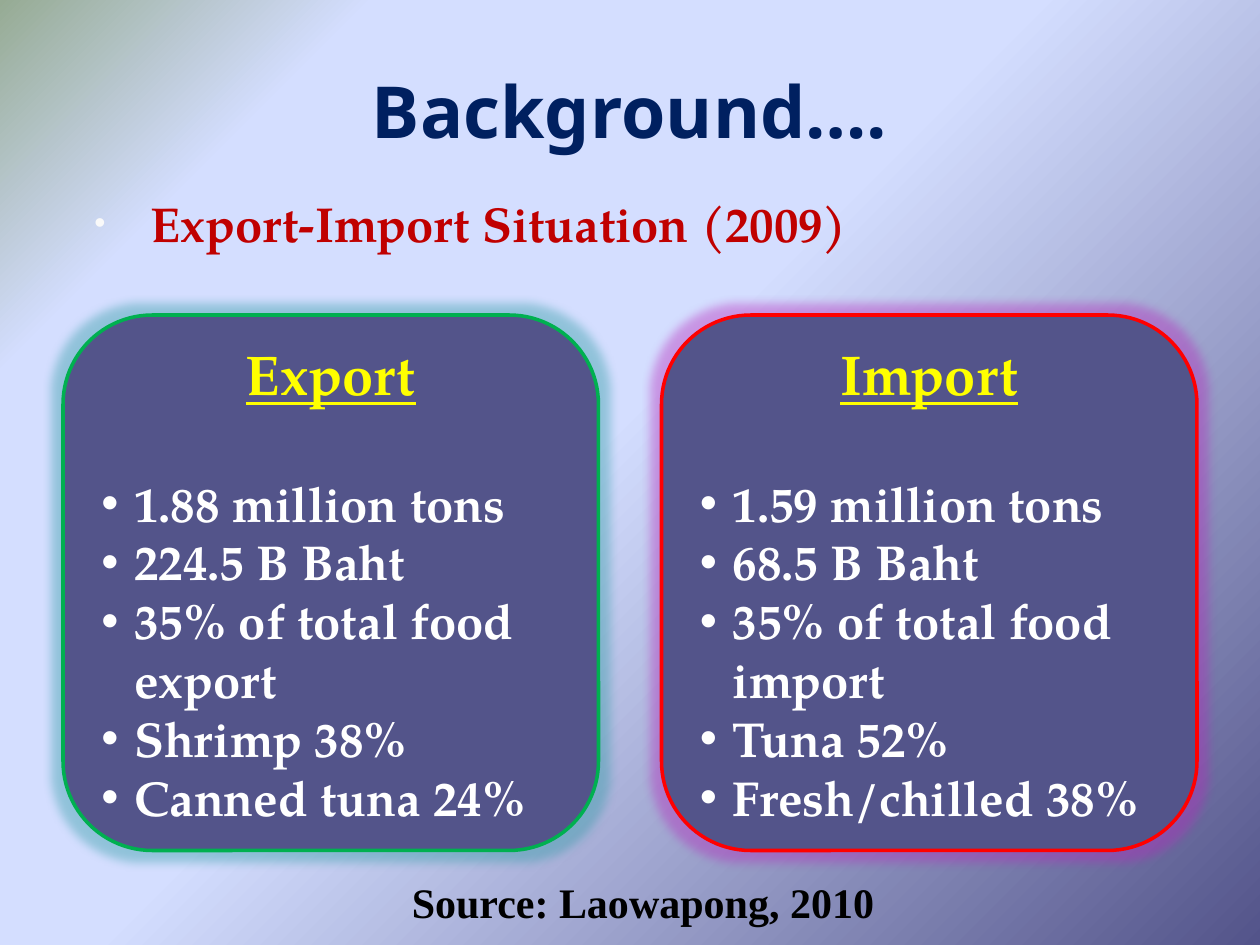
from pptx import Presentation
from pptx.dml.color import RGBColor
from pptx.enum.shapes import MSO_SHAPE as Shape
from pptx.enum.text import MSO_ANCHOR as Anchor, PP_ALIGN as Align
from pptx.oxml import parse_xml
from pptx.oxml.ns import nsdecls
from pptx.util import Inches, Pt

COLORS = {
    "panel": "53548A", "sky": "D4DEFF", "sage": "96AB94",
    "title": "002060", "topic": "C00000", "heading": "FFFF00",
    "text": "FFFFFF", "source": "000000", "bullet": "F9F9F9",
    "export": "00B050", "import": "FF0000",
    "export_glow": "2C9AA3", "import_glow": "B627BC",
}
SERIF = "TeX Gyre Pagella"


def color(name):
    return RGBColor.from_string(COLORS[name])


def element(tag, attributes="", content=""):
    return parse_xml(f"<a:{tag} {nsdecls('a')} {attributes}>{content}</a:{tag}>")


def solid(name, alpha=100):
    return f'<a:srgbClr val="{COLORS[name]}"><a:alpha val="{alpha * 1000}"/></a:srgbClr>'


def paint_background(page):
    page.background.fill.gradient()
    gradient = page.background._cSld.xpath("p:bg/p:bgPr/a:gradFill")[0]
    for child in list(gradient):
        gradient.remove(child)
    stops = [(0, "panel", 39), (53, "sky", 100), (83, "sky", 100), (100, "sage", 100)]
    gradient.append(element("gsLst", content="".join(
        f'<a:gs pos="{place * 1000}">{solid(name, alpha)}</a:gs>'
        for place, name, alpha in stops)))
    gradient.append(element(
        "path", 'path="circle"', '<a:fillToRect l="100000" t="100000"/>'))


def add_bullet(para, indent, hanging, tint=None, percent=100):
    props = para._p.get_or_add_pPr()
    props.set("marL", str(Inches(indent)))
    props.set("indent", str(-Inches(hanging)))
    if tint:
        props.append(element("buClr", content=solid(tint)))
    props.append(element("buSzPct", f'val="{percent * 1000}"'))
    props.append(element("buFont", 'typeface="Arial"'))
    props.append(element("buChar", 'char="•"'))


def write(frame, text, size, tint, font=SERIF, align=Align.LEFT, underline=False,
          line_spacing=None, before=0, after=0):
    first = frame.paragraphs[0]
    para = frame.add_paragraph() if first.runs else first
    para.alignment = align
    para.line_spacing = line_spacing
    para.space_before = Pt(before)
    para.space_after = Pt(after)
    span = para.add_run()
    span.text = text
    span.font.name = font
    span.font.size = Pt(size)
    span.font.bold = True
    span.font.underline = underline
    span.font.color.rgb = color(tint)
    return para


def add_box(page, left, top, width, height, anchor=Anchor.TOP):
    box = page.shapes.add_textbox(
        Inches(left), Inches(top), Inches(width), Inches(height))
    box.text_frame.word_wrap = True
    box.text_frame.vertical_anchor = anchor
    return box.text_frame


def add_panel(page, left, kind, facts):
    side = Inches(4.25)
    panel = page.shapes.add_shape(
        Shape.ROUNDED_RECTANGLE, Inches(left), Inches(2.5), side, side)
    panel.shadow.inherit = False
    panel.fill.solid()
    panel.fill.fore_color.rgb = color("panel")
    panel.line.color.rgb = color(kind)
    panel.line.width = Pt(2)
    effects = panel._element.spPr.xpath("a:effectLst")[0]
    effects.append(element("glow", f'rad="{Pt(11)}"', solid(f"{kind}_glow", 40)))

    frame = panel.text_frame
    frame.word_wrap = True
    frame.vertical_anchor = Anchor.MIDDLE
    write(frame, kind.capitalize(), 32, "heading",
          align=Align.CENTER, underline=True, after=38)
    for fact in facts:
        add_bullet(write(frame, fact, 28, "text"), 0.26, 0.26)


def main():
    deck = Presentation()
    deck.slide_width, deck.slide_height = Inches(10), Inches(7.5)
    page = deck.slides.add_slide(deck.slide_layouts[6])
    paint_background(page)

    title = add_box(page, 0.5, 0.25, 9, 1.25, Anchor.MIDDLE)
    write(title, "Background….", 41, "title", font="Noto Sans", align=Align.CENTER)

    topic = add_box(page, 0.5, 1.25, 9, 5.65)
    para = write(topic, "Export-Import Situation (2009)", 28, "topic",
                 line_spacing=1.5, before=5.6)
    add_bullet(para, 0.6, 0.45, "bullet", 65)

    add_panel(page, 0.5, "export", [
        "1.88 million tons", "224.5 B Baht", "35% of total food export",
        "Shrimp 38%", "Canned tuna 24%"])
    add_panel(page, 5.25, "import", [
        "1.59 million tons", "68.5 B Baht", "35% of total food import",
        "Tuna 52%", "Fresh/chilled 38%"])

    source = add_box(page, 3.17, 6.91, 4, 0.51)
    write(source, "Source: Laowapong, 2010", 24, "source", font="Times New Roman")
    deck.save("out.pptx")


if __name__ == "__main__":
    main()
